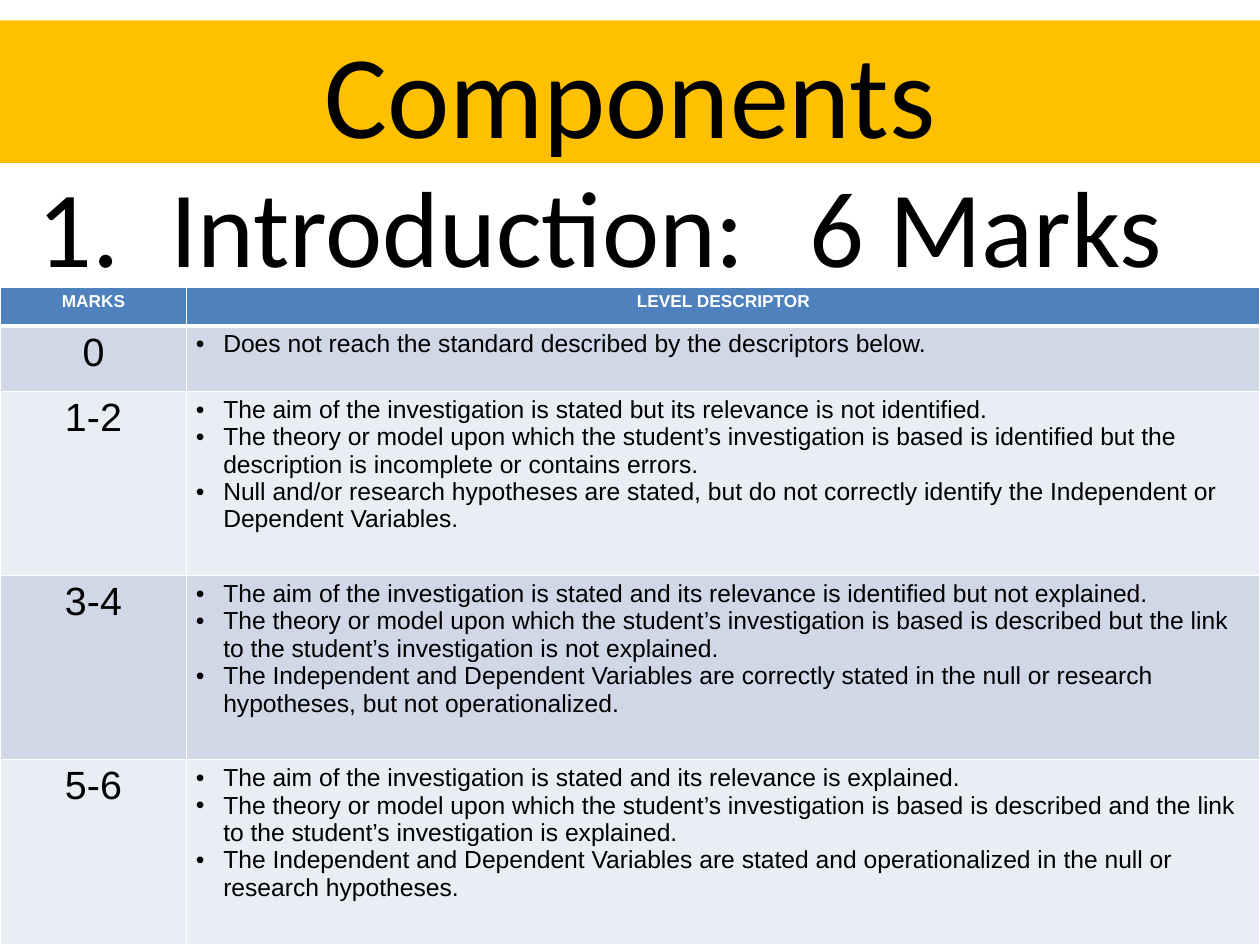
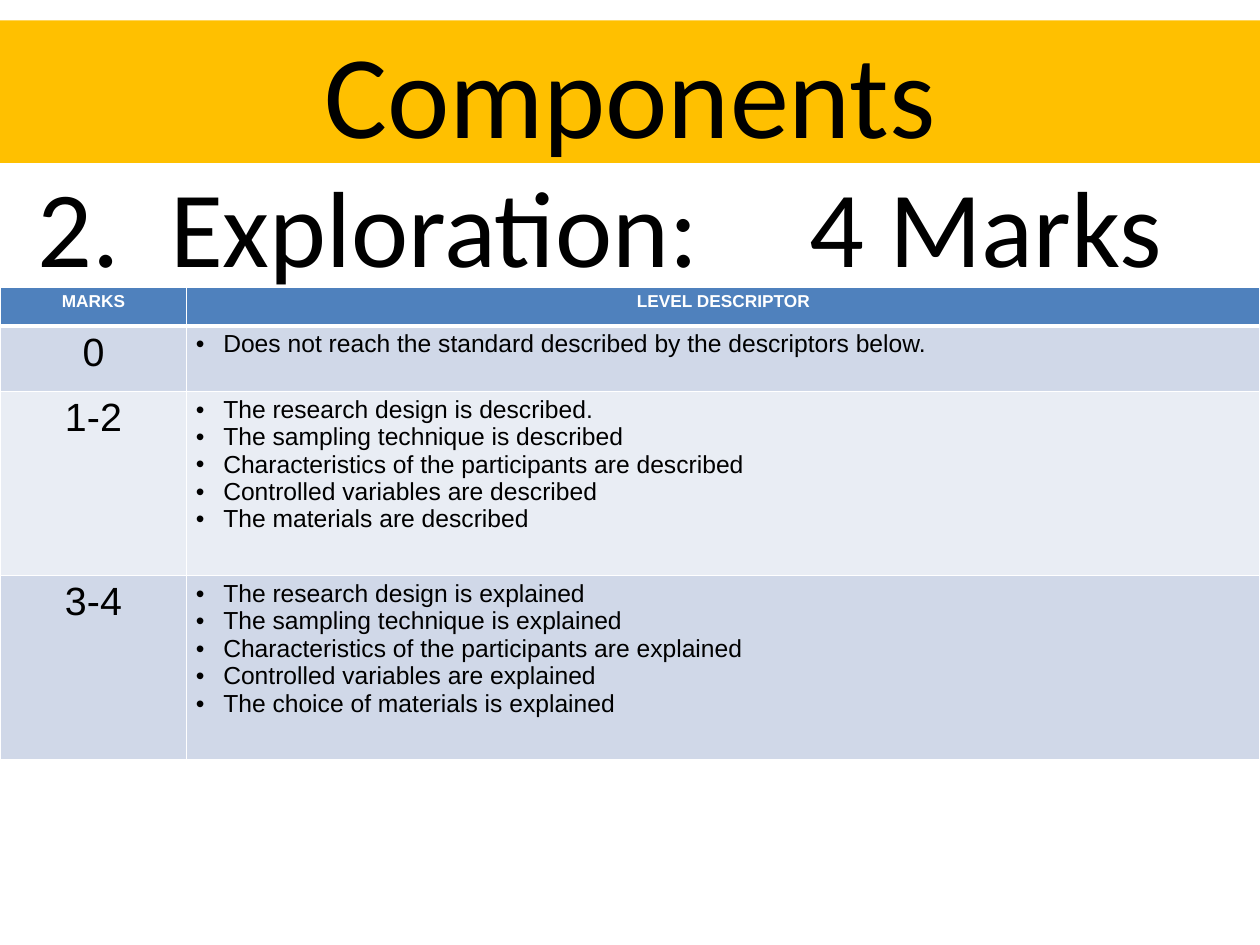
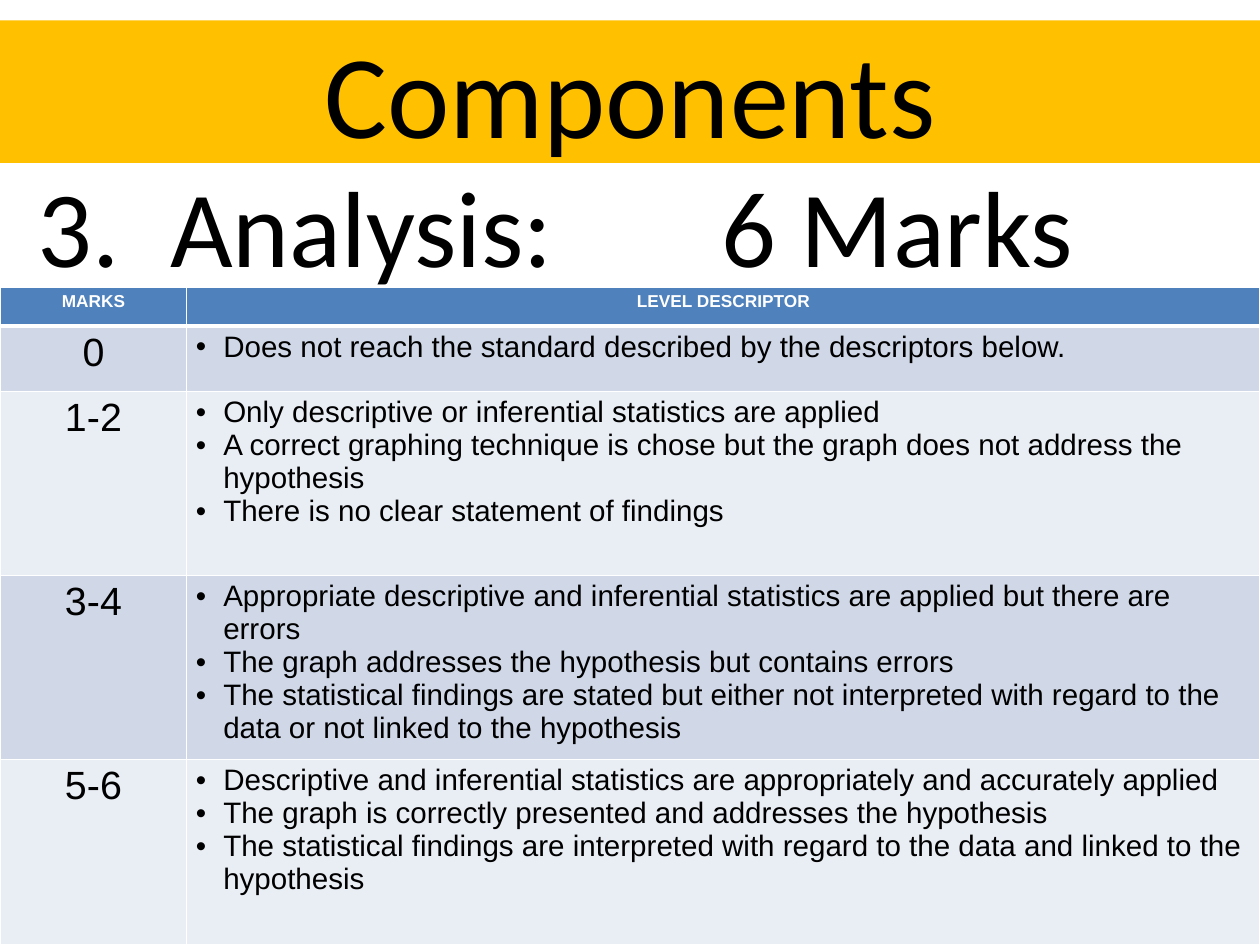
from dataclasses import dataclass

from lxml import etree
from pptx import Presentation
from pptx.dml.color import RGBColor
from pptx.enum.text import MSO_ANCHOR, MSO_AUTO_SIZE, PP_ALIGN
from pptx.oxml.ns import qn
from pptx.util import Inches, Pt

CENTER, LEFT = PP_ALIGN.CENTER, PP_ALIGN.LEFT
TOP, MIDDLE = MSO_ANCHOR.TOP, MSO_ANCHOR.MIDDLE
NO_AUTOFIT = MSO_AUTO_SIZE.NONE

BLACK = RGBColor(0x00, 0x00, 0x00)
WHITE = RGBColor(0xFF, 0xFF, 0xFF)
GOLD = RGBColor(0xFF, 0xC0, 0x00)
HEADER_BLUE = RGBColor(0x4F, 0x81, 0xBD)
BANDS = (RGBColor(0xD0, 0xD8, 0xE8), RGBColor(0xE9, 0xED, 0xF4))

TITLE_FONT, TABLE_FONT = "Calibri", "Arial"
SLIDE_WIDTH, SLIDE_HEIGHT = 14.22, 10.67
PADDING = 0.14
TABLE_TOP = 3.25
COLUMN_WIDTHS = (2.11, 12.11)
HEADER_HEIGHT, ZERO_HEIGHT, LEVEL_HEIGHT = 0.43, 0.74, 2.08
THIN, THICK = 1, 3
HEADERS = ("MARKS", "LEVEL DESCRIPTOR")


@dataclass(frozen=True)
class Level:
    marks: str
    descriptors: tuple[str, ...]


@dataclass(frozen=True)
class Component:
    name: str
    marks: str
    marks_position: float
    descriptor_size: int
    levels: tuple[Level, ...]


ZERO_LEVEL = Level("0", ("Does not reach the standard described by the descriptors below.",))

COMPONENTS = (
    Component("Introduction:", "6 Marks", 9, 20, (
        Level("1-2", (
            "The aim of the investigation is stated but its relevance is not identified.",
            "The theory or model upon which the student’s investigation is based is "
            "identified but the description is incomplete or contains errors.",
            "Null and/or research hypotheses are stated, but do not correctly identify "
            "the Independent or Dependent Variables.",
        )),
        Level("3-4", (
            "The aim of the investigation is stated and its relevance is identified "
            "but not explained.",
            "The theory or model upon which the student’s investigation is based is "
            "described but the link to the student’s investigation is not explained.",
            "The Independent and Dependent Variables are correctly stated in the null "
            "or research hypotheses, but not operationalized.",
        )),
        Level("5-6", (
            "The aim of the investigation is stated and its relevance is explained.",
            "The theory or model upon which the student’s investigation is based is "
            "described and the link to the student’s investigation is explained.",
            "The Independent and Dependent Variables are stated and operationalized in "
            "the null or research hypotheses.",
        )),
    )),
    Component("Exploration:", "4 Marks", 9, 20, (
        Level("1-2", (
            "The research design is described.",
            "The sampling technique is described",
            "Characteristics of the participants are described",
            "Controlled variables are described",
            "The materials are described",
        )),
        Level("3-4", (
            "The research design is explained",
            "The sampling technique is explained",
            "Characteristics of the participants are explained",
            "Controlled variables are explained",
            "The choice of materials is explained",
        )),
    )),
    Component("Analysis:", "6 Marks", 8, 24, (
        Level("1-2", (
            "Only descriptive or inferential statistics are applied",
            "A correct graphing technique is chose but the graph does not address the "
            "hypothesis",
            "There is no clear statement of findings",
        )),
        Level("3-4", (
            "Appropriate descriptive and inferential statistics are applied but there "
            "are errors",
            "The graph addresses the hypothesis but contains errors",
            "The statistical findings are stated but either not interpreted with regard "
            "to the data or not linked to the hypothesis",
        )),
        Level("5-6", (
            "Descriptive and inferential statistics are appropriately and accurately "
            "applied",
            "The graph is correctly presented and addresses the hypothesis",
            "The statistical findings are interpreted with regard to the data and linked "
            "to the hypothesis",
        )),
    )),
)


def write_text(paragraph, text: str, *, size: float, font: str, color: RGBColor = BLACK,
               bold: bool = False, align=LEFT) -> None:
    paragraph.alignment = align
    run = paragraph.add_run()
    run.text = text
    run.font.size = Pt(size)
    run.font.name = font
    run.font.bold = bold
    run.font.color.rgb = color


def add_solid_fill(parent, tag: str, color: RGBColor) -> None:
    """Append a solid colour to parent, directly under an element named tag."""
    holder = etree.SubElement(parent, qn(tag))
    etree.SubElement(holder, qn("a:srgbClr"), val=str(color))


def set_list_marker(paragraph, *, left: float, hanging: float, font: str, tag: str,
                    **attributes: str):
    """Give the paragraph a hanging indent and a bullet or number; return its properties."""
    properties = paragraph._p.get_or_add_pPr()
    properties.set("marL", str(Inches(left)))
    properties.set("indent", str(Inches(-hanging)))
    add_solid_fill(properties, "a:buClr", BLACK)
    etree.SubElement(properties, qn("a:buFont"), typeface=font)
    etree.SubElement(properties, qn(tag), **attributes)
    return properties


def place_placeholder(shape, top: float, height: float, anchor):
    """Stretch a placeholder across the slide and return its text frame."""
    shape.left, shape.top = Inches(0), Inches(top)
    shape.width, shape.height = Inches(SLIDE_WIDTH), Inches(height)
    frame = shape.text_frame
    frame.word_wrap = True
    frame.auto_size = NO_AUTOFIT
    frame.vertical_anchor = anchor
    frame.margin_left = frame.margin_right = Inches(PADDING)
    frame.margin_top = frame.margin_bottom = Inches(PADDING)
    return frame


def add_title(slide) -> None:
    title = slide.shapes.title
    title.fill.solid()
    title.fill.fore_color.rgb = GOLD
    frame = place_placeholder(title, 0.23, 1.61, MIDDLE)
    write_text(frame.paragraphs[0], "Components", size=96, font=TITLE_FONT, align=CENTER)


def add_heading(slide, number: int, component: Component) -> None:
    frame = place_placeholder(slide.placeholders[1], 1.83, 1.58, TOP)
    paragraph = frame.paragraphs[0]
    paragraph.line_spacing = 0.9
    paragraph.space_before = Pt(8)
    write_text(paragraph, f"{component.name}\t{component.marks}", size=88, font=TITLE_FONT)
    properties = set_list_marker(paragraph, left=1.78, hanging=1.5, font=TITLE_FONT,
                                 tag="a:buAutoNum", type="arabicPeriod", startAt=str(number))
    tab_stops = etree.SubElement(properties, qn("a:tabLst"))
    etree.SubElement(tab_stops, qn("a:tab"), pos=str(Inches(component.marks_position)), algn="l")


def format_cell(cell, fill: RGBColor, *, top: int = THIN, bottom: int = THIN) -> None:
    """Set white borders, widths in points, and then the fill."""
    properties = cell._tc.get_or_add_tcPr()
    for side, width in (("L", THIN), ("R", THIN), ("T", top), ("B", bottom)):
        border = etree.SubElement(properties, qn(f"a:ln{side}"), w=str(Pt(width)))
        add_solid_fill(border, "a:solidFill", WHITE)
    cell.fill.solid()
    cell.fill.fore_color.rgb = fill


def write_descriptors(cell, descriptors: tuple[str, ...], size: int) -> None:
    frame = cell.text_frame
    for index, descriptor in enumerate(descriptors):
        paragraph = frame.add_paragraph() if index else frame.paragraphs[0]
        write_text(paragraph, descriptor, size=size, font=TABLE_FONT)
        set_list_marker(paragraph, left=0.31, hanging=0.31, font=TABLE_FONT,
                        tag="a:buChar", char="•")


def add_level_table(slide, component: Component) -> None:
    levels = (ZERO_LEVEL, *component.levels)
    heights = (HEADER_HEIGHT, ZERO_HEIGHT, *[LEVEL_HEIGHT] * len(component.levels))
    table = slide.shapes.add_table(
        len(heights), len(COLUMN_WIDTHS), Inches(0), Inches(TABLE_TOP),
        Inches(SLIDE_WIDTH), Inches(sum(heights))).table
    for column, width in zip(table.columns, COLUMN_WIDTHS):
        column.width = Inches(width)
    for row, height in zip(table.rows, heights):
        row.height = Inches(height)

    for column_index, header in enumerate(HEADERS):
        cell = table.cell(0, column_index)
        write_text(cell.text_frame.paragraphs[0], header, size=14, font=TABLE_FONT,
                   color=WHITE, bold=True, align=CENTER)
        format_cell(cell, HEADER_BLUE, bottom=THICK)

    for row_index, level in enumerate(levels, start=1):
        marks_cell, descriptor_cell = table.rows[row_index].cells
        write_text(marks_cell.text_frame.paragraphs[0], level.marks, size=32,
                   font=TABLE_FONT, align=CENTER)
        write_descriptors(descriptor_cell, level.descriptors, component.descriptor_size)
        for cell in (marks_cell, descriptor_cell):
            format_cell(cell, BANDS[(row_index - 1) % 2],
                        top=THICK if row_index == 1 else THIN)


def main() -> None:
    presentation = Presentation()
    presentation.slide_width = Inches(SLIDE_WIDTH)
    presentation.slide_height = Inches(SLIDE_HEIGHT)
    layout = presentation.slide_layouts[1]
    for number, component in enumerate(COMPONENTS, start=1):
        slide = presentation.slides.add_slide(layout)
        add_title(slide)
        add_heading(slide, number, component)
        add_level_table(slide, component)
    presentation.save("out.pptx")


if __name__ == "__main__":
    main()
